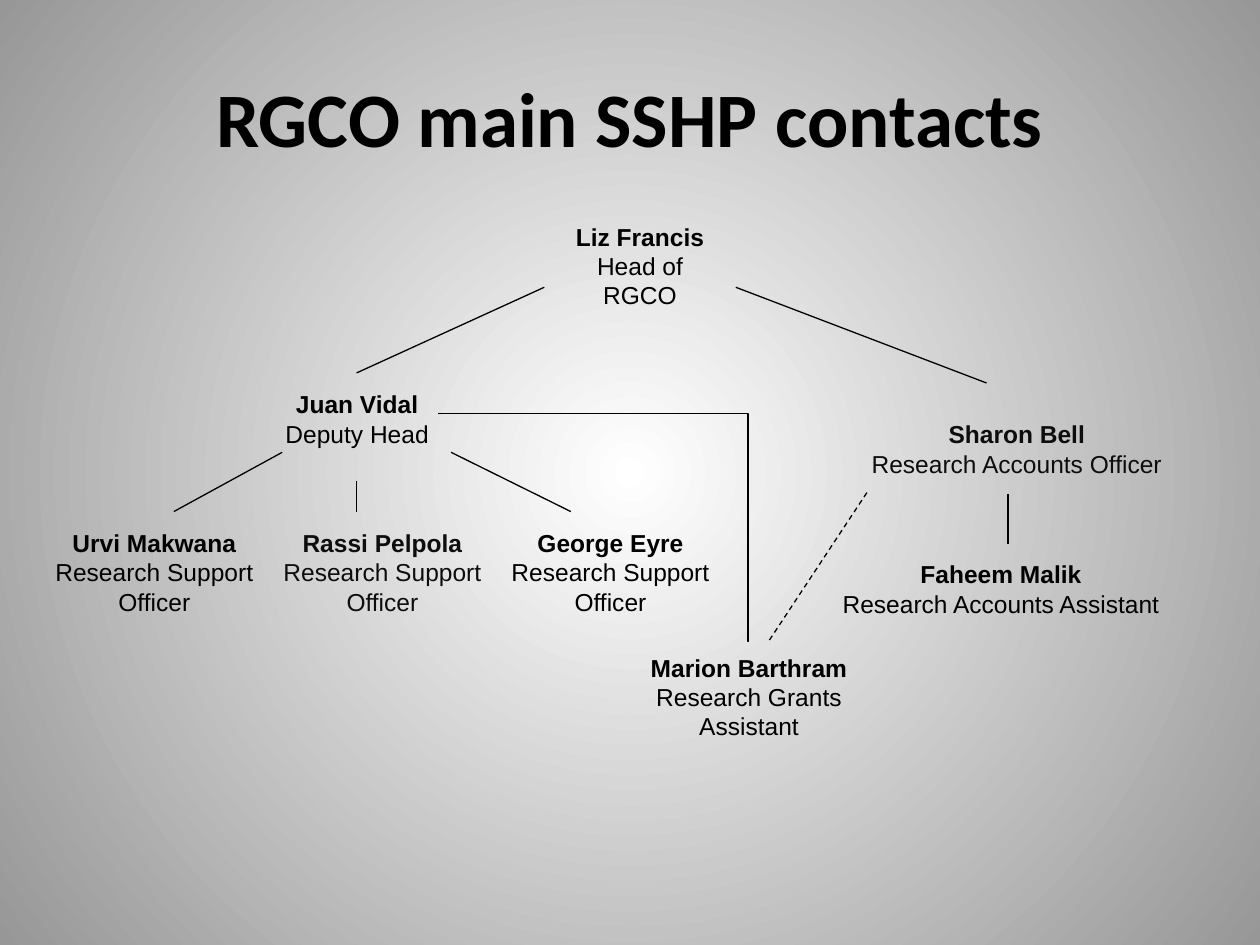
from lxml.etree import SubElement
from pptx import Presentation
from pptx.dml.color import RGBColor
from pptx.enum.dml import MSO_LINE
from pptx.enum.shapes import MSO_CONNECTOR
from pptx.enum.text import MSO_ANCHOR, MSO_AUTO_SIZE, PP_ALIGN
from pptx.oxml.ns import qn
from pptx.util import Inches, Pt

BLACK = RGBColor(0x00, 0x00, 0x00)
SOFT_BLACK = RGBColor(0x0D, 0x0D, 0x0D)
WHITE = RGBColor(0xFF, 0xFF, 0xFF)
GREY = RGBColor(0x97, 0x97, 0x97)

SUPPORT_LEFT, SUPPORT_STEP = 0.28, 1.81
SUPPORT_OFFICERS = [
    ("Urvi Makwana", ["Research Support Officer"], BLACK),
    ("Rassi Pelpola", ["Research Support Officer"], SOFT_BLACK),
    ("George Eyre", ["Research Support", "Officer"], BLACK),
]
LEADERS_AND_ASSISTANTS = [
    ((4.33, 1.71, 1.5, 0.57), "Liz Francis", "Head of RGCO", BLACK, True),
    ((1.85, 3.04, 1.97, 0.77), "Juan Vidal", "Deputy Head", BLACK, True),
    ((6.81, 3.28, 2.52, 0.57), "Sharon Bell", "Research Accounts Officer", SOFT_BLACK, False),
    ((6.58, 4.39, 2.73, 0.57), "Faheem Malik", "Research Accounts Assistant", BLACK, False),
    ((4.88, 5.13, 2.13, 0.81), "Marion Barthram", "Research Grants Assistant", BLACK, True),
]
REPORTING_LINES = [
    ((4.32, 2.28), (2.83, 2.96)),
    ((5.84, 2.28), (7.83, 3.04)),
    ((2.24, 3.59), (1.38, 4.06)),
    ((2.83, 3.82), (2.83, 4.06)),
    ((3.58, 3.59), (4.53, 4.06)),
    ((8, 3.92), (8, 4.32)),
]


def paint_background(page):
    """Fill the page with a circular gradient, white at the centre."""
    fill = page.background.fill
    fill.gradient()
    for stop, color, position in zip(fill.gradient_stops, (WHITE, GREY), (0, 1)):
        stop.color.rgb = color
        stop.position = position
    gradient = next(page.element.iter(qn("a:gradFill")))
    gradient.remove(gradient.find(qn("a:lin")))
    circle = SubElement(gradient, qn("a:path"), {"path": "circle"})
    SubElement(circle, qn("a:fillToRect"), {side: "50000" for side in "ltrb"})


def add_text(page, box, lines, font_name, size, color, wrap=True):
    """Place centred lines in the box, the first one bold."""
    shape = page.shapes.add_textbox(*map(Inches, box))
    frame = shape.text_frame
    frame.word_wrap = wrap
    frame.text = "\n".join(lines)
    for index, para in enumerate(frame.paragraphs):
        para.alignment = PP_ALIGN.CENTER
        para.font.name = font_name
        para.font.size = Pt(size)
        para.font.bold = index == 0
        para.font.color.rgb = color
    return frame


def add_title(page, box):
    """Place the page title in the middle of the box."""
    frame = add_text(page, box, ["RGCO main SSHP contacts"], "Calibri", 44, BLACK)
    frame.vertical_anchor = MSO_ANCHOR.MIDDLE


def add_contact(page, box, name, roles, color, wrap=True):
    """Place a contact's name above the role."""
    frame = add_text(page, box, [name, *roles], "Arial", 14, color, wrap)
    frame.auto_size = MSO_AUTO_SIZE.SHAPE_TO_FIT_TEXT


def add_line(page, start, end, kind=MSO_CONNECTOR.STRAIGHT):
    """Draw a thin black connector without shadow."""
    line = page.shapes.add_connector(kind, *map(Inches, (*start, *end)))
    line.line.color.rgb = BLACK
    line.line.width = Pt(0.75)
    SubElement(line.element.spPr, qn("a:effectLst"))
    return line


def add_corner_line(page, start, end):
    """Draw an elbow that runs across first and then straight down."""
    elbow = add_line(page, start, end, MSO_CONNECTOR.ELBOW)
    geometry = elbow.element.spPr.find(qn("a:prstGeom"))
    guides = geometry.find(qn("a:avLst"))
    if guides is None:
        guides = SubElement(geometry, qn("a:avLst"))
    SubElement(guides, qn("a:gd"), {"name": "adj1", "fmla": "val 99900"})


def add_contact_chart(page):
    """Place all contacts and the lines between them."""
    for box, name, role, color, wrap in LEADERS_AND_ASSISTANTS:
        add_contact(page, box, name, [role], color, wrap)
    for column, (name, roles, color) in enumerate(SUPPORT_OFFICERS):
        box = (SUPPORT_LEFT + column * SUPPORT_STEP, 4.14, 1.89, 0.81)
        add_contact(page, box, name, roles, color)
    for start, end in REPORTING_LINES:
        add_line(page, start, end)
    add_corner_line(page, (3.48, 3.28), (5.94, 5.09))
    add_line(page, (6.88, 3.91), (6.1, 5.09)).line.dash_style = MSO_LINE.DASH


def main():
    """Build and save the deck."""
    deck = Presentation()
    deck.slide_width, deck.slide_height = Inches(10), Inches(7.5)
    page = deck.slides.add_slide(deck.slide_layouts[6])
    paint_background(page)
    add_title(page, (0.5, 0.3, 9, 1.25))
    add_contact_chart(page)
    deck.save("out.pptx")


if __name__ == "__main__":
    main()
